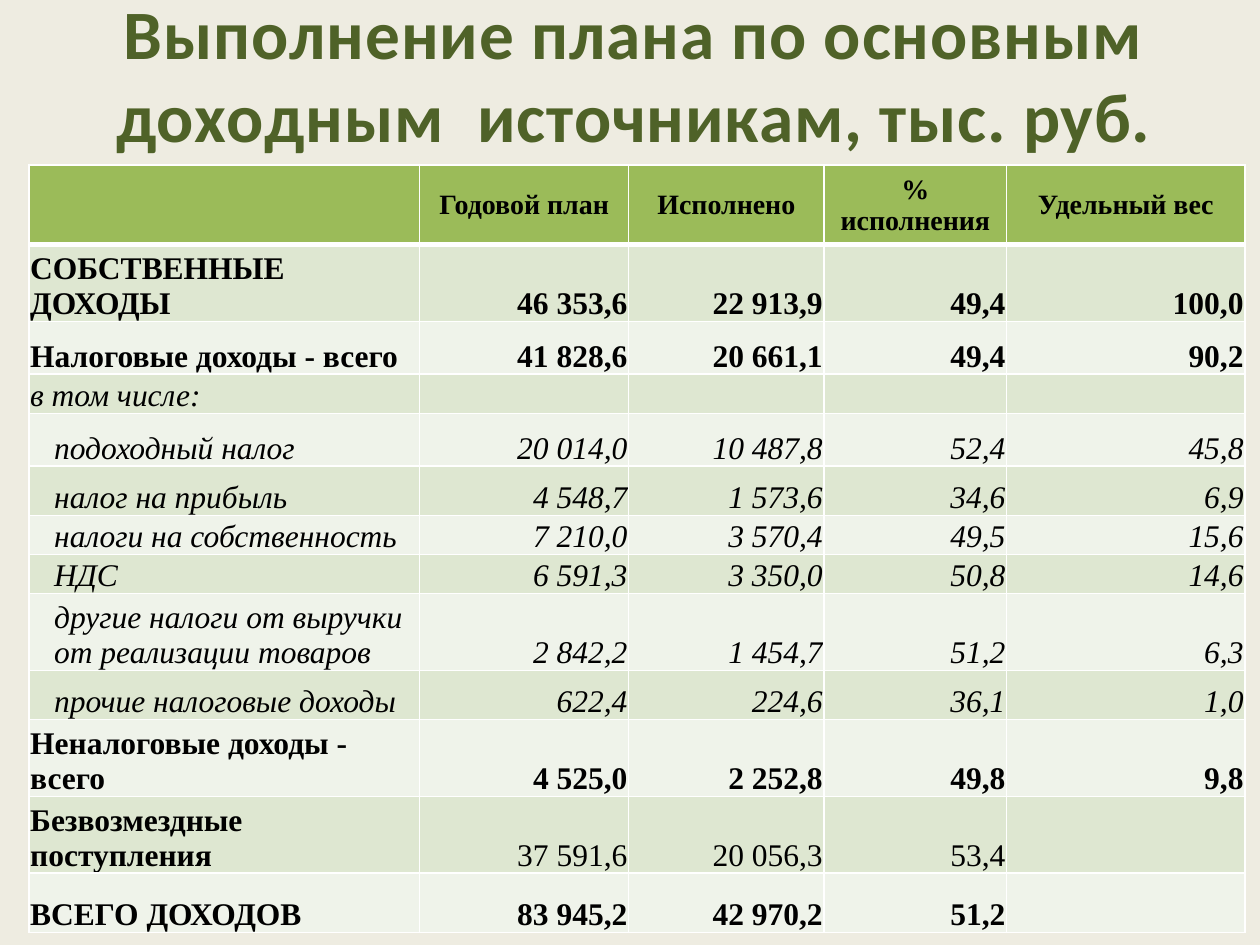
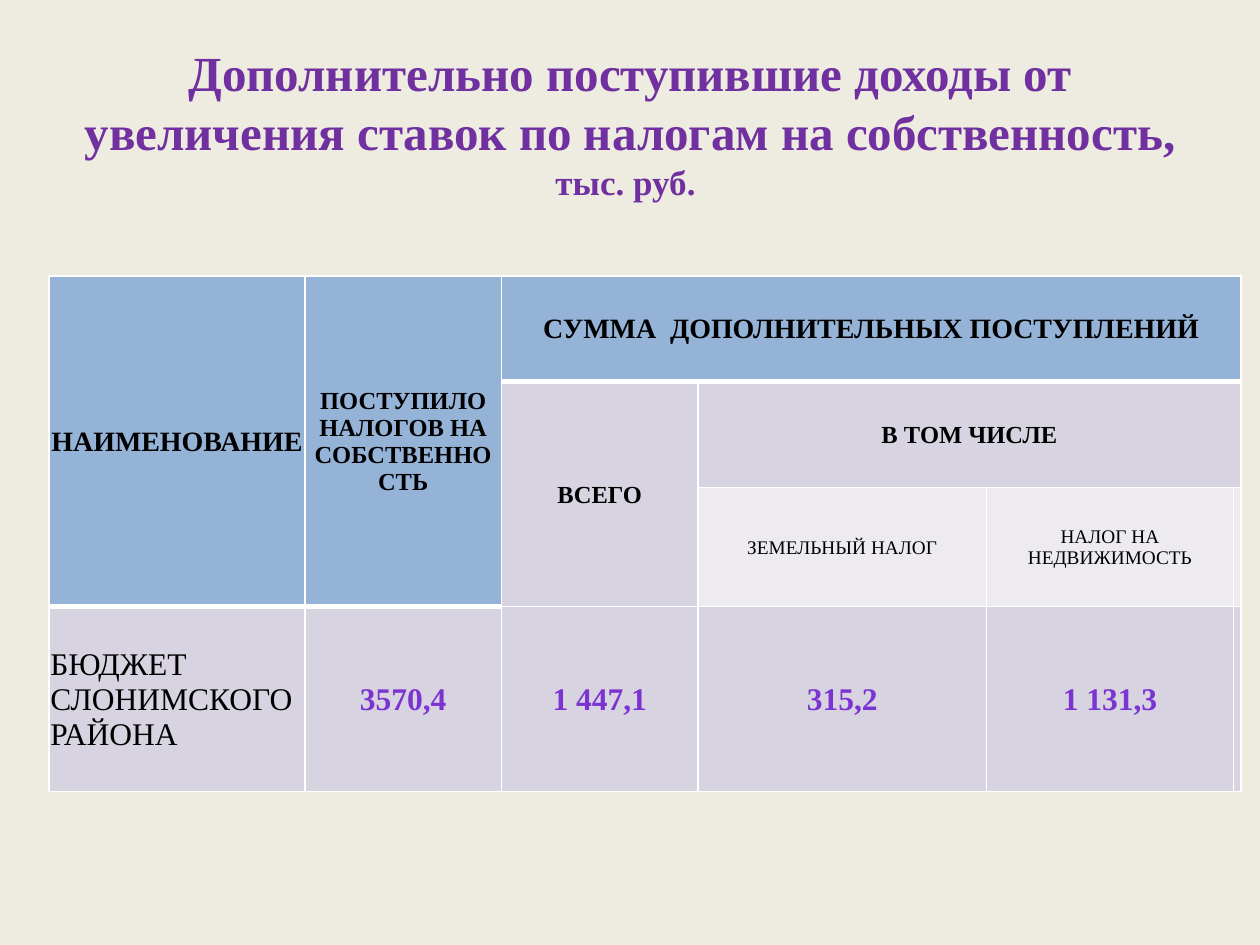
from lxml import etree
from pptx import Presentation
from pptx.dml.color import RGBColor
from pptx.enum.text import MSO_ANCHOR as Anchor, PP_ALIGN as Align
from pptx.oxml.ns import qn
from pptx.util import Inches, Pt

PAPER, BLACK, WHITE = "EEECE1", "000000", "FFFFFF"
OLIVE, PURPLE, VIOLET = "4F6228", "7030A0", "7B34D2"
GREEN_HEAD, GREEN_BANDS = "9BBB59", ("DEE7D1", "EFF3EA")
BLUE_HEAD, LILAC, PALE_LILAC = "95B3D7", "D8D3E0", "EDEAF0"
SERIF, SANS = "Times New Roman", "Calibri"

PLAN_TITLE = "Выполнение плана по основным доходным  источникам, тыс. руб."
PLAN_HEADINGS = ["", "Годовой план", "Исполнено", "% исполнения", "Удельный вес"]
PLAN_COLUMNS = [3.1, 1.66, 1.55, 1.45, 1.89]
PLAN_HEAD_HEIGHT = 0.63
# kind, row height, label, values
PLAN_ROWS = [
    ("total", 0.56, "СОБСТВЕННЫЕ ДОХОДЫ", ["46 353,6", "22 913,9", "49,4", "100,0"]),
    ("total", 0.42, "Налоговые доходы - всего", ["41 828,6", "20 661,1", "49,4", "90,2"]),
    ("note", 0.28, "в том числе:", ["", "", "", ""]),
    ("item", 0.42, "подоходный налог", ["20 014,0", "10 487,8", "52,4", "45,8"]),
    ("item", 0.39, "налог на прибыль", ["4 548,7", "1 573,6", "34,6", "6,9"]),
    ("item", 0.31, "налоги на собственность", ["7 210,0", "3 570,4", "49,5", "15,6"]),
    ("item", 0.31, "НДС", ["6 591,3", "3 350,0", "50,8", "14,6"]),
    ("item", 0.56, "другие налоги от выручки от реализации товаров",
     ["2 842,2", "1 454,7", "51,2", "6,3"]),
    ("item", 0.39, "прочие налоговые доходы", ["622,4", "224,6", "36,1", "1,0"]),
    ("total", 0.56, "Неналоговые доходы - всего", ["4 525,0", "2 252,8", "49,8", "9,8"]),
    ("grant", 0.56, "Безвозмездные поступления", ["37 591,6", "20 056,3", "53,4", ""]),
    ("total", 0.47, "ВСЕГО ДОХОДОВ", ["83 945,2", "42 970,2", "51,2", ""]),
]

EXTRA_TITLE = "Дополнительно поступившие доходы от увеличения ставок по налогам на собственность, "
EXTRA_UNIT = "тыс. руб. "
EXTRA_COLUMNS = [2.03, 1.56, 1.56, 2.29, 1.96, 0.04]
EXTRA_ROWS = [0.84, 0.84, 0.87, 1.47]
# row, column, rows spanned, columns spanned, text, size, bold
EXTRA_HEADINGS = [
    (0, 0, 3, 1, "НАИМЕНОВАНИЕ", 16, True),
    (0, 1, 3, 1, "ПОСТУПИЛО НАЛОГОВ НА СОБСТВЕННОСТЬ", 14, True),
    (0, 2, 1, 4, "СУММА  ДОПОЛНИТЕЛЬНЫХ ПОСТУПЛЕНИЙ", 16, True),
    (1, 2, 2, 1, "ВСЕГО", 14, True),
    (1, 3, 1, 3, "В ТОМ ЧИСЛЕ", 14, True),
    (2, 3, 1, 1, "ЗЕМЕЛЬНЫЙ НАЛОГ", 11, False),
    (2, 4, 1, 1, "НАЛОГ НА НЕДВИЖИМОСТЬ", 11, False),
]
EXTRA_DISTRICT = "БЮДЖЕТ СЛОНИМСКОГО РАЙОНА"
EXTRA_VALUES = ["3570,4", "1 447,1", "315,2", "1 131,3"]


def rgb(color):
    return RGBColor.from_string(color)


def add_run(paragraph, text, size, color=BLACK, bold=False, italic=False, face=SERIF):
    run = paragraph.add_run()
    run.text = text
    font = run.font
    font.name, font.size, font.bold, font.italic = face, Pt(size), bold, italic
    font.color.rgb = rgb(color)
    return run


def add_slide(prs):
    slide = prs.slides.add_slide(prs.slide_layouts[6])
    slide.background.fill.solid()
    slide.background.fill.fore_color.rgb = rgb(PAPER)
    return slide


def add_title(slide, place):
    """Return the centred paragraph of a new title box."""
    frame = slide.shapes.add_textbox(*map(Inches, place)).text_frame
    frame.word_wrap = True
    frame.vertical_anchor = Anchor.MIDDLE
    frame.paragraphs[0].alignment = Align.CENTER
    return frame.paragraphs[0]


def add_grid(slide, left, top, widths, heights):
    table = slide.shapes.add_table(
        len(heights), len(widths), Inches(left), Inches(top),
        Inches(sum(widths)), Inches(sum(heights))).table
    table.first_row = table.horz_banding = False
    for column, width in zip(table.columns, widths):
        column.width = Inches(width)
    for row, height in zip(table.rows, heights):
        row.height = Inches(height)
    return table


def dress_cell(cell, fill, thick_bottom=False):
    """Set fill, white borders and narrow margins; keep an empty cell low."""
    properties = cell._tc.get_or_add_tcPr()
    for side in "LRTB":
        width = Pt(3 if side == "B" and thick_bottom else 1)
        line = etree.SubElement(properties, qn(f"a:ln{side}"), w=str(width))
        solid = etree.SubElement(line, qn("a:solidFill"))
        etree.SubElement(solid, qn("a:srgbClr"), val=WHITE)
    cell.fill.solid()
    cell.fill.fore_color.rgb = rgb(fill)
    cell.margin_left = cell.margin_right = cell.margin_top = Inches(0.01)
    cell.margin_bottom = 0
    paragraph = cell.text_frame.paragraphs[0]
    etree.SubElement(paragraph._p, qn("a:endParaRPr"), sz="1000")


def write_cell(cell, text, size, align=Align.CENTER, anchor=Anchor.MIDDLE, **style):
    cell.vertical_anchor = anchor
    paragraph = cell.text_frame.paragraphs[0]
    paragraph.alignment = align
    if text:
        add_run(paragraph, text, size, **style)


def build_plan(prs):
    slide = add_slide(prs)
    title = add_title(slide, (0.23, 0, 9.61, 1.17))
    run = add_run(title, PLAN_TITLE, 39.6, OLIVE, bold=True, face=SANS)
    run._r.get_or_add_rPr().set("spc", "50")

    heights = [PLAN_HEAD_HEIGHT] + [height for _, height, _, _ in PLAN_ROWS]
    table = add_grid(slide, 0.23, 1.31, PLAN_COLUMNS, heights)
    for col, heading in enumerate(PLAN_HEADINGS):
        dress_cell(table.cell(0, col), GREEN_HEAD, thick_bottom=True)
        write_cell(table.cell(0, col), heading, 16, bold=True)

    for row, (kind, _, label, values) in enumerate(PLAN_ROWS, 1):
        italic = kind in ("note", "item")
        for col, text in enumerate([label] + values):
            cell = table.cell(row, col)
            dress_cell(cell, GREEN_BANDS[(row - 1) % 2])
            bold = kind == "total" or (kind == "grant" and col == 0)
            align = Align.RIGHT if col else Align.LEFT
            write_cell(cell, text, 18, align, Anchor.BOTTOM, bold=bold, italic=italic)
        if kind == "item":
            table.cell(row, 0).margin_left = Inches(0.2)


def build_extra(prs):
    slide = add_slide(prs)
    title = add_title(slide, (0.5, 0.23, 9, 1.48))
    add_run(title, EXTRA_TITLE, 28, PURPLE, bold=True)
    add_run(title, EXTRA_UNIT, 20, PURPLE, bold=True)

    table = add_grid(slide, 0.39, 2.19, EXTRA_COLUMNS, EXTRA_ROWS)
    last = len(EXTRA_ROWS) - 1
    for row in range(len(EXTRA_ROWS)):
        for col in range(len(EXTRA_COLUMNS)):
            in_head = row == 0 or (row < last and col < 2)
            closes_head = row == 0 or (row == last - 1 and col < 2)
            band = PALE_LILAC if row == 2 and col > 2 else LILAC
            dress_cell(table.cell(row, col), BLUE_HEAD if in_head else band, closes_head)

    for row, col, down, across, text, size, bold in EXTRA_HEADINGS:
        cell = table.cell(row, col)
        if down * across > 1:
            cell.merge(table.cell(row + down - 1, col + across - 1))
        write_cell(cell, text, size, bold=bold)

    write_cell(table.cell(last, 0), EXTRA_DISTRICT, 18, Align.LEFT)
    for col, value in enumerate(EXTRA_VALUES, 1):
        write_cell(table.cell(last, col), value, 18, color=VIOLET, bold=True)


def main():
    prs = Presentation()
    prs.slide_width, prs.slide_height = Inches(10), Inches(7.5)
    build_plan(prs)
    build_extra(prs)
    prs.save("out.pptx")


if __name__ == "__main__":
    main()
